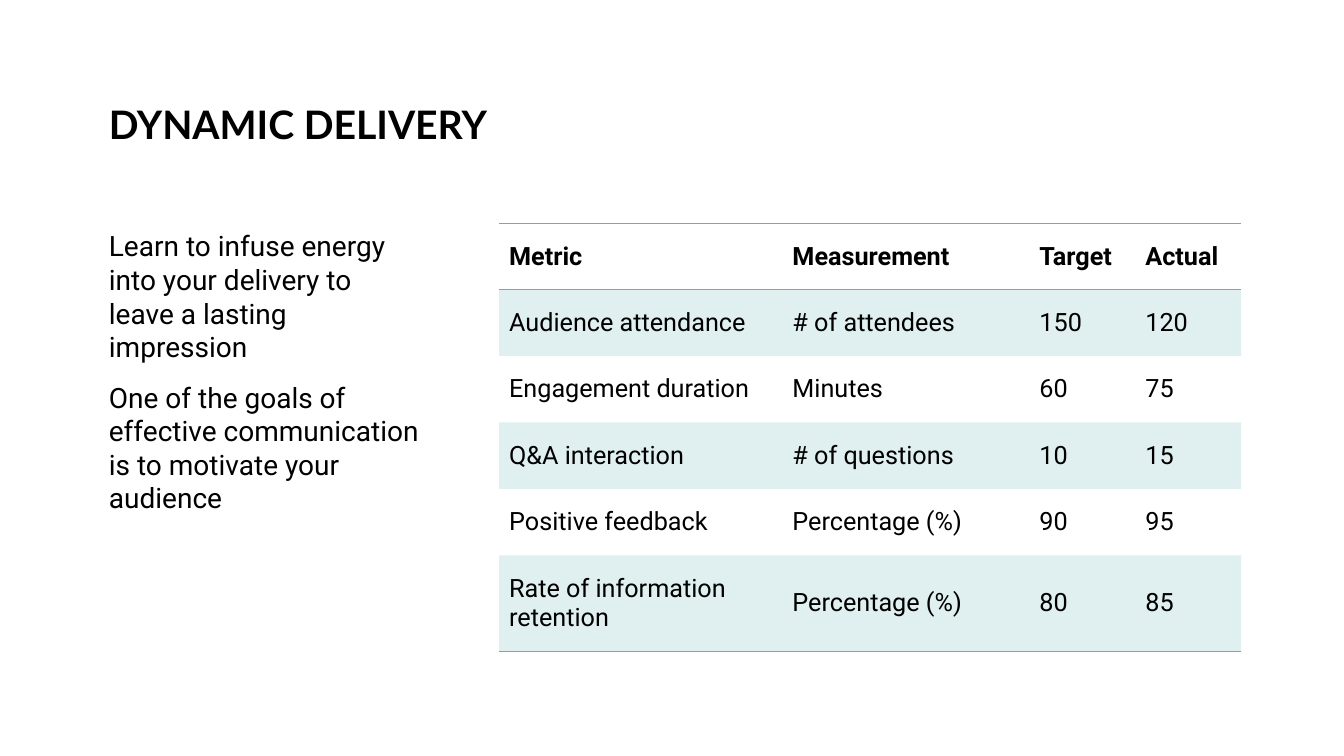
from lxml.etree import SubElement
from pptx import Presentation
from pptx.dml.color import RGBColor as Color
from pptx.enum.text import MSO_ANCHOR as Anchor, MSO_AUTO_SIZE as AutoSize, PP_ALIGN as Align
from pptx.oxml.ns import qn
from pptx.util import Inches, Pt

COLORS = {"text": "000000", "accent": "66B2B0", "page": "FFFFFF"}
TITLE = {"name": "Lato", "size": Pt(28), "bold": True}
BODY = {"name": "Roboto", "size": Pt(20), "bold": False}
HEADER = {"name": "Roboto", "size": Pt(18), "bold": True}
VALUE = {**HEADER, "bold": False}


def write(para, text, font_format):
    span = para.add_run()
    span.text = text
    for name, value in font_format.items():
        setattr(span.font, name, value)
    span.font.color.rgb = Color.from_string(COLORS["text"])


def place(box, left, top, width, height):
    box.left, box.top, box.width, box.height = map(Inches, (left, top, width, height))
    box.text_frame.word_wrap = True
    box.text_frame.auto_size = AutoSize.NONE


deck = Presentation()
deck.slide_width, deck.slide_height = Inches(13.33), Inches(7.5)
page = deck.slides.add_slide(deck.slide_layouts[1])
page.background.fill.solid()
page.background.fill.fore_color.rgb = Color.from_string(COLORS["page"])

# Title
title = page.shapes.title
place(title, 0.98, 0.15, 6.75, 1.37)
title.text_frame.vertical_anchor = Anchor.BOTTOM
para = title.text_frame.paragraphs[0]
para.alignment, para.line_spacing = Align.LEFT, 0.9
write(para, "DYNAMIC DELIVERY", TITLE)

# Body text, without bullets
body = page.placeholders[1]
place(body, 0.98, 2.22, 3.3, 4.27)
messages = [
    "Learn to infuse energy into your delivery to leave a lasting impression",
    "One of the goals of effective communication is to motivate your audience",
]
for index, message in enumerate(messages):
    frame = body.text_frame
    para = frame.add_paragraph() if index else frame.paragraphs[0]
    para.space_before, para.space_after = Pt(0), Pt(12)
    properties = para._p.get_or_add_pPr()
    properties.set("marL", "0")
    properties.set("indent", "0")
    SubElement(properties, qn("a:buNone"))
    write(para, message, BODY)

# Metrics table
metrics = [
    ("Metric", "Measurement", "Target", "Actual"),
    ("Audience attendance", "# of attendees", "150", "120"),
    ("Engagement duration", "Minutes", "60", "75"),
    ("Q&A interaction", "# of questions", "10", "15"),
    ("Positive feedback", "Percentage (%)", "90", "95"),
    ("Rate of information retention", "Percentage (%)", "80", "85"),
]
widths = [2.81, 2.45, 1.05, 1.05]
heights = [0.65] + [0.66] * 4 + [0.95]
last = len(metrics) - 1
table = page.shapes.add_table(
    len(metrics), len(widths), Inches(4.95), Inches(2.22),
    Inches(sum(widths)), Inches(sum(heights)),
).table
table.horz_banding = False
for column, width in zip(table.columns, widths):
    column.width = Inches(width)
for row, height in zip(table.rows, heights):
    row.height = Inches(height)

# Rules above and below the header and below the last row
edges = {0: ("lnT", "lnB"), 1: ("lnT",), last: ("lnB",)}
for row, values in enumerate(metrics):
    for column, value in enumerate(values):
        cell = table.cell(row, column)
        cell.vertical_anchor = Anchor.MIDDLE
        write(cell.text_frame.paragraphs[0], value, VALUE if row else HEADER)
        properties = cell._tc.get_or_add_tcPr()
        for side in ("lnL", "lnR", "lnT", "lnB"):
            ruled = side in edges.get(row, ())
            line = SubElement(properties, qn(f"a:{side}"), w=str(Pt(1) if ruled else 0))
            paint = SubElement(line, qn("a:solidFill" if ruled else "a:noFill"))
            if ruled:
                SubElement(paint, qn("a:srgbClr"), val=COLORS["accent"])
        if row % 2:
            cell.fill.solid()
            cell.fill.fore_color.rgb = Color.from_string(COLORS["accent"])
            tint = properties.find(f"{qn('a:solidFill')}/{qn('a:srgbClr')}")
            SubElement(tint, qn("a:alpha"), val="20000")
        else:
            cell.fill.background()

deck.save("out.pptx")
